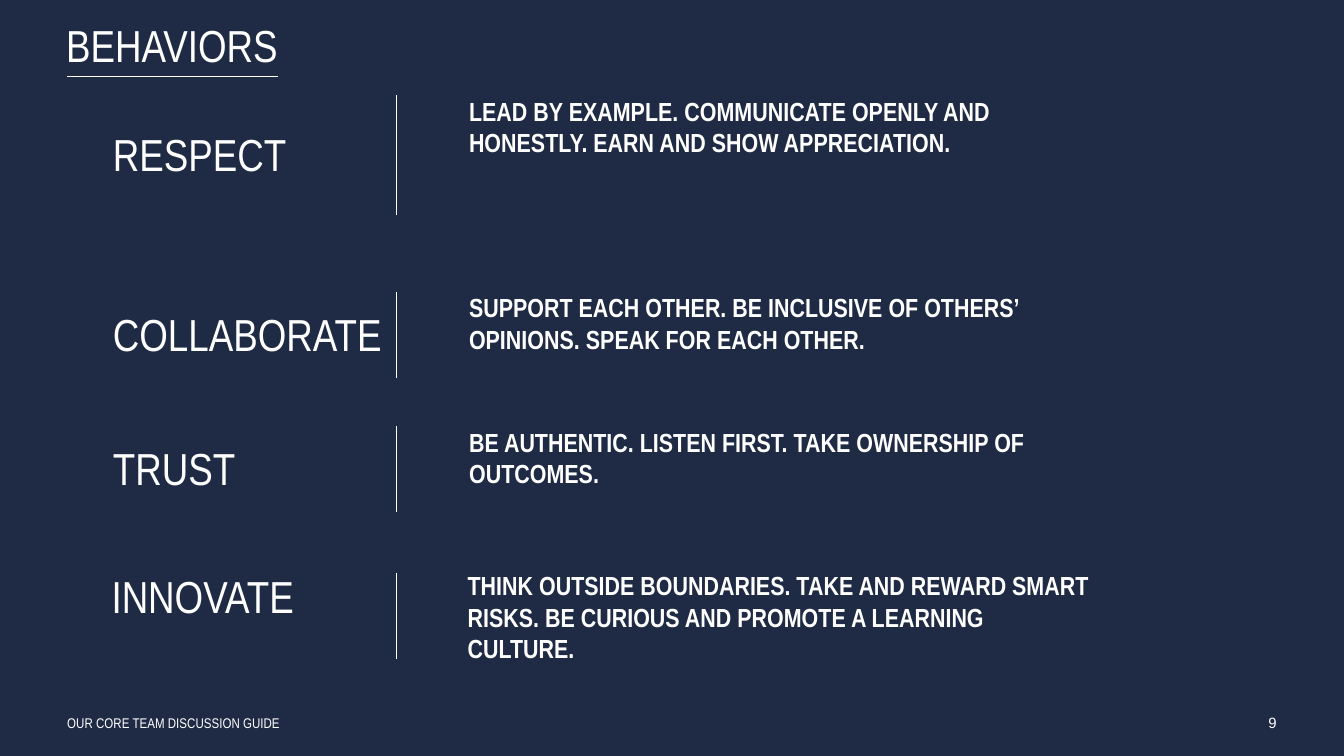
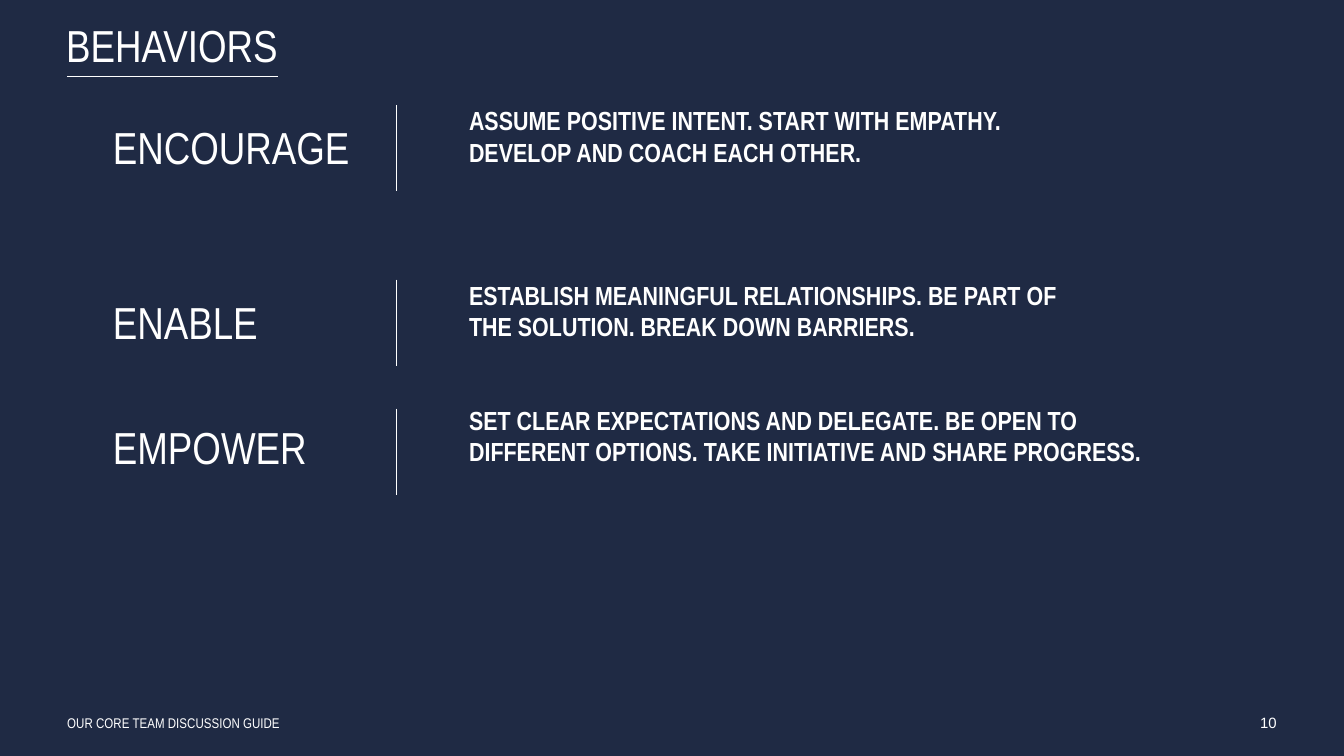
from dataclasses import dataclass

from lxml import etree
from pptx import Presentation
from pptx.dml.color import RGBColor
from pptx.enum.shapes import MSO_CONNECTOR as Connector
from pptx.enum.text import MSO_ANCHOR as Anchor, PP_ALIGN as Align
from pptx.oxml.ns import qn
from pptx.util import Inches, Pt

SLIDE_WIDTH = Inches(10)
SLIDE_HEIGHT = SLIDE_WIDTH * 9 // 16
CELL = SLIDE_WIDTH // 100  # square grid: 100 columns across the slide

LABEL_COLUMN, RULE_COLUMN, TEXT_COLUMN = 8.4, 29.5, 34.9
LABEL_WIDTH = 21.9
MARGIN = 5
FOOTER_ROW = 53


@dataclass(frozen=True)
class Theme:
    background: RGBColor = RGBColor(0x1F, 0x2A, 0x44)
    ink: RGBColor = RGBColor(0xFF, 0xFF, 0xFF)
    font: str = "Arial Narrow"
    number_font: str = "Arial"
    heading_size: float = 24
    body_size: float = 14
    footer_size: float = 7.5
    number_size: float = 8
    line_width: float = 1


THEME = Theme()


@dataclass(frozen=True)
class Behavior:
    """One label, rule and text; rows and sizes are in grid cells."""
    label: str
    text: str
    row: float
    text_width: float = 46.4
    text_height: float = 6.7
    label_height: float = 6.7
    rule_height: float = 6.4
    label_rise: float = 0
    rule_drop: float = 0
    indent: float = 0


SLIDES = {
    9: [
        Behavior("RESPECT",
                 "LEAD BY EXAMPLE. COMMUNICATE OPENLY AND HONESTLY. "
                 "EARN AND SHOW APPRECIATION.",
                 7.1, text_width=46.7, text_height=11.2,
                 label_height=9.2, rule_height=8.9),
        Behavior("COLLABORATE",
                 "SUPPORT EACH OTHER. BE INCLUSIVE OF OTHERS’ OPINIONS. "
                 "SPEAK FOR EACH OTHER.",
                 21.7, text_height=7.9),
        Behavior("TRUST",
                 "BE AUTHENTIC. LISTEN FIRST. TAKE OWNERSHIP OF OUTCOMES.",
                 31.7, text_width=45.9),
        Behavior("INNOVATE",
                 "THINK OUTSIDE BOUNDARIES. TAKE AND REWARD SMART RISKS. "
                 "BE CURIOUS AND PROMOTE A LEARNING CULTURE.",
                 42.4, text_width=46.7, text_height=11.2, label_height=9.2,
                 label_rise=2.4, rule_drop=0.2, indent=-0.1),
    ],
    10: [
        Behavior("ENCOURAGE",
                 "ASSUME POSITIVE INTENT. START WITH EMPATHY. "
                 "DEVELOP AND COACH EACH OTHER.",
                 7.8, text_height=7.9),
        Behavior("ENABLE",
                 "ESTABLISH MEANINGFUL RELATIONSHIPS. BE PART OF THE SOLUTION. "
                 "BREAK DOWN BARRIERS.",
                 20.8, text_width=45.9),
        Behavior("EMPOWER",
                 "SET CLEAR EXPECTATIONS AND DELEGATE. BE OPEN TO DIFFERENT "
                 "OPTIONS. TAKE INITIATIVE AND SHARE PROGRESS.",
                 30.1, text_width=54.5, rule_drop=0.3),
    ],
}


def cells(*counts):
    return [round(count * CELL) for count in counts]


def add_text(slide, text, box, size, font=THEME.font, bold=False,
             align=Align.LEFT, wrap=True, inset=0):
    """Add a one-paragraph text box; box is column, row, width, height."""
    frame = slide.shapes.add_textbox(*cells(*box)).text_frame
    frame.margin_left = frame.margin_right = frame.margin_bottom = 0
    frame.margin_top = Inches(inset)
    frame.word_wrap = wrap
    paragraph = frame.paragraphs[0]
    paragraph.text = text
    paragraph.alignment = align
    paragraph.font.name = font
    paragraph.font.size = Pt(size)
    paragraph.font.bold = bold
    paragraph.font.color.rgb = THEME.ink
    return frame


def add_heading(slide, text, box, align=Align.LEFT):
    frame = add_text(slide, text, box, THEME.heading_size, align=align)
    frame.vertical_anchor = Anchor.MIDDLE
    frame.paragraphs[0].line_spacing = 0.9


def add_rule(slide, start, end):
    rule = slide.shapes.add_connector(
        Connector.STRAIGHT, *cells(*start, *end))
    rule.line.color.rgb = THEME.ink
    rule.line.width = Pt(THEME.line_width)
    etree.SubElement(rule._element.spPr, qn("a:effectLst"))


def add_behavior(slide, behavior):
    row = behavior.row
    add_text(slide, behavior.text,
             (TEXT_COLUMN + behavior.indent, row,
              behavior.text_width, behavior.text_height),
             THEME.body_size, bold=True)
    add_heading(slide, behavior.label,
                (LABEL_COLUMN + behavior.indent, row - behavior.label_rise,
                 LABEL_WIDTH, behavior.label_height))
    rule_top = row + behavior.rule_drop
    add_rule(slide, (RULE_COLUMN, rule_top),
             (RULE_COLUMN, rule_top + behavior.rule_height))


def add_frame(slide, number):
    """Add what every slide shares: background, footer and title."""
    fill = slide.background.fill
    fill.solid()
    fill.fore_color.rgb = THEME.background
    add_text(slide, "OUR CORE TEAM DISCUSSION GUIDE",
             (MARGIN, FOOTER_ROW, 43.5, 2), THEME.footer_size,
             wrap=False, inset=0.02)
    add_text(slide, str(number), (95 - MARGIN, FOOTER_ROW, 5, 2),
             THEME.number_size, font=THEME.number_font,
             align=Align.RIGHT, wrap=False, inset=0.01)
    add_heading(slide, "BEHAVIORS", (0, 0, 25.6, 7.1), Align.CENTER)
    add_rule(slide, (MARGIN, 5.7), (20.7, 5.7))


def main():
    presentation = Presentation()
    presentation.slide_width = SLIDE_WIDTH
    presentation.slide_height = SLIDE_HEIGHT
    blank = presentation.slide_layouts[6]
    for number, behaviors in SLIDES.items():
        slide = presentation.slides.add_slide(blank)
        add_frame(slide, number)
        for behavior in behaviors:
            add_behavior(slide, behavior)
    presentation.save("out.pptx")


if __name__ == "__main__":
    main()
